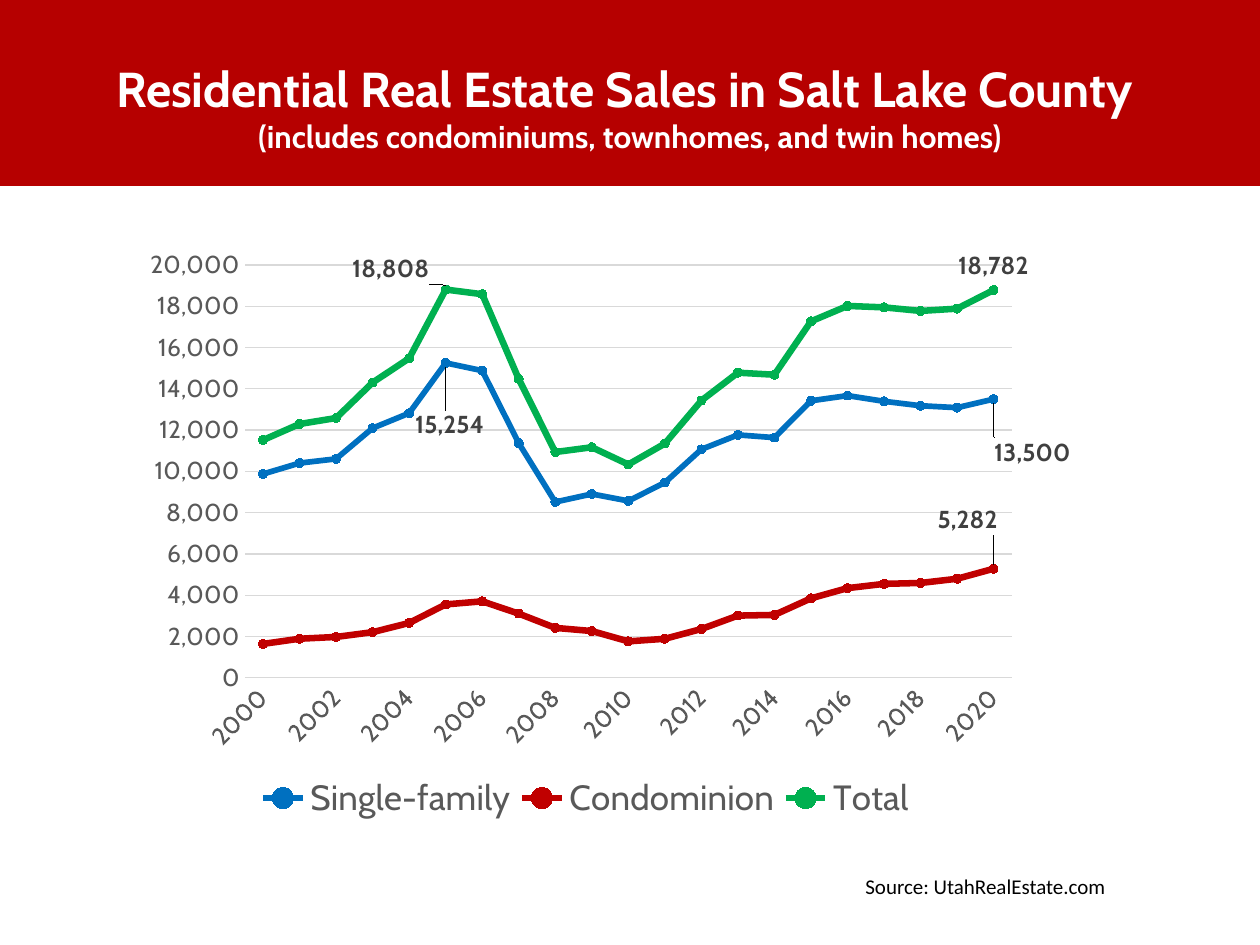
from lxml.etree import SubElement
from pptx import Presentation
from pptx.chart.data import CategoryChartData
from pptx.dml.color import RGBColor
from pptx.enum.chart import (XL_CHART_TYPE, XL_LABEL_POSITION, XL_LEGEND_POSITION,
                             XL_MARKER_STYLE, XL_TICK_MARK)
from pptx.enum.shapes import MSO_SHAPE
from pptx.enum.text import PP_ALIGN
from pptx.oxml import parse_xml
from pptx.oxml.ns import qn
from pptx.util import Pt

PX = 914400 / 126  # EMU in one px
CHART_BOX = (136, 238, 935, 592)

THEME = {
    "banner": "B60000", "white": "FFFFFF", "black": "000000",
    "grid": "D9D9D9", "axis_text": "595959", "label_text": "404040",
    "font": "Cabin", "source_font": "Calibri",
    "title": 28, "subtitle": 18, "source": 12, "axis": 14, "label": 14, "legend": 20,
}

YEARS = [str(year) for year in range(2000, 2021)]
ABOVE, BELOW = XL_LABEL_POSITION.ABOVE, XL_LABEL_POSITION.BELOW

# Labels: point index -> (position, shift right in px, shift down in px)
SERIES = [
    {"name": "Single-family", "color": "0070C0", "width": 3.25,
     "values": [9875, 10403, 10606, 12093, 12819, 15254, 14878, 11368, 8517, 8905, 8570,
                9458, 11067, 11768, 11636, 13421, 13669, 13395, 13179, 13087, 13500],
     "labels": {5: (BELOW, 4, 38), 20: (BELOW, 39, 29)}},
    {"name": "Condominion", "color": "C00000", "width": 3.75,
     "values": [1642, 1892, 1979, 2209, 2657, 3554, 3704, 3108, 2419, 2264, 1765,
                1889, 2363, 3012, 3045, 3847, 4344, 4549, 4592, 4796, 5282],
     "labels": {20: (ABOVE, -26, -24)}},
    {"name": "Total", "color": "00B050", "width": 3.75,
     "values": [11517, 12295, 12585, 14302, 15476, 18808, 18582, 14476, 10936, 11169, 10335,
                11347, 13430, 14780, 14681, 17268, 18013, 17944, 17771, 17883, 18782],
     "labels": {5: (ABOVE, -55, 4), 20: (ABOVE, 0, 0)}},
]

C_NS = "http://schemas.openxmlformats.org/drawingml/2006/chart"
C15_NS = "http://schemas.microsoft.com/office/drawing/2012/chart"
LEADER_LINES = (
    f'<c:extLst xmlns:c="{C_NS}"><c:ext uri="{{CE6537A1-D6FC-4f65-9D91-7224C49458BB}}" '
    f'xmlns:c15="{C15_NS}"><c15:showLeaderLines val="1"/></c:ext></c:extLst>')


def emu(box):
    return [round(n * PX) for n in box]


def rgb(key):
    return RGBColor.from_string(THEME.get(key, key))


def set_font(font, size, color, name="font", bold=False):
    values = {"size": Pt(THEME[size]), "name": THEME[name], "bold": bold}
    for attr, value in values.items():
        setattr(font, attr, value)
    font.color.rgb = rgb(color)


def set_line(line, color, width):
    line.color.rgb = rgb(color)
    line.width = Pt(width)


def add_banner(slide, box):
    sp = slide.shapes.add_shape(MSO_SHAPE.RECTANGLE, *emu(box))
    sp.shadow.inherit = False
    sp.fill.solid()
    sp.fill.fore_color.rgb = rgb("banner")
    sp.line.fill.background()


def add_text(slide, box, lines, align, wrap=True):
    """Each line is its text and a dict of font values."""
    tf = slide.shapes.add_textbox(*emu(box)).text_frame
    tf.word_wrap = wrap
    for i, (text, style) in enumerate(lines):
        p = tf.add_paragraph() if i else tf.paragraphs[0]
        p.alignment = align
        r = p.add_run()
        r.text = text
        set_font(r.font, **style)


def manual_layout(x, y, w=None, h=None, inner=False, edge=True):
    """Layout element in fractions of the chart; edge=False means an offset."""
    target = '<c:layoutTarget val="inner"/>' if inner else ""
    modes = '<c:xMode val="edge"/><c:yMode val="edge"/>' if edge else ""
    _, _, width, height = CHART_BOX
    parts = {"x": x / width, "y": y / height}
    if w:
        parts.update(w=w / width, h=h / height)
    sizes = "".join(f'<c:{k} val="{v:.4f}"/>' for k, v in parts.items())
    return parse_xml(f'<c:layout xmlns:c="{C_NS}"><c:manualLayout>{target}{modes}{sizes}'
                     '</c:manualLayout></c:layout>')


def replace_layout(parent, layout, index):
    for old in parent.findall(qn("c:layout")):
        parent.remove(old)
    parent.insert(index, layout)


def style_axes(chart):
    cat, val = chart.category_axis, chart.value_axis
    for axis in (cat, val):
        axis.major_tick_mark = axis.minor_tick_mark = XL_TICK_MARK.NONE
        set_font(axis.tick_labels.font, "axis", "axis_text")
    # Slanted years, every second one shown
    set_line(cat.format.line, "grid", 0.75)
    cat._element.find(qn("c:txPr")).find(qn("a:bodyPr")).set("rot", "-2700000")
    skip = SubElement(cat._element, qn("c:tickLblSkip"))
    skip.set("val", "2")
    cat._element.find(qn("c:noMultiLvlLbl")).addprevious(skip)
    # Value scale with gridlines only
    scale = {"minimum_scale": 0, "maximum_scale": 20000, "major_unit": 2000}
    for attr, value in scale.items():
        setattr(val, attr, value)
    val.tick_labels.number_format = "#,##0"
    val.tick_labels.number_format_is_linked = False
    val.format.line.fill.background()
    set_line(val.major_gridlines.format.line, "grid", 0.75)


def style_series(ser, data):
    ser.smooth = False
    set_line(ser.format.line, data["color"], data["width"])
    ser.marker.style = XL_MARKER_STYLE.CIRCLE
    ser.marker.size = 5
    ser.marker.format.fill.solid()
    ser.marker.format.fill.fore_color.rgb = rgb(data["color"])
    set_line(ser.marker.format.line, data["color"], 0.75)
    # Callout values, moved off their points
    for index, (position, _, _) in data["labels"].items():
        label = ser.points[index].data_label
        set_font(label.font, "label", "label_text", bold=True)
        label.position = position
    ser.data_labels.show_value = False
    d_lbls = ser._element.find(qn("c:dLbls"))
    for d_lbl, (_, dx, dy) in zip(d_lbls.findall(qn("c:dLbl")), data["labels"].values()):
        if dx or dy:
            replace_layout(d_lbl, manual_layout(dx, dy, edge=False), 1)
    d_lbls.append(parse_xml(LEADER_LINES))


def add_sales_chart(slide):
    chart_data = CategoryChartData(number_format="#,##0")
    chart_data.categories = YEARS
    for data in SERIES:
        chart_data.add_series(data["name"], data["values"])
    chart = slide.shapes.add_chart(XL_CHART_TYPE.LINE_MARKERS, *emu(CHART_BOX), chart_data).chart
    chart.has_title = False
    chart.plots[0].vary_by_categories = False
    style_axes(chart)
    for ser, data in zip(chart.plots[0].series, SERIES):
        style_series(ser, data)
    # Legend below the plot
    chart.has_legend = True
    legend = chart.legend
    legend.position = XL_LEGEND_POSITION.BOTTOM
    legend.include_in_layout = False
    set_font(legend.font, "legend", "axis_text")
    replace_layout(legend._element, manual_layout(116, 536, 670, 54), 1)
    plot_area = chart._chartSpace.chart.plotArea
    replace_layout(plot_area, manual_layout(109, 27, 769, 413, inner=True), 0)


def main():
    prs = Presentation()
    prs.slide_width, prs.slide_height = emu((1260, 945))
    slide = prs.slides.add_slide(prs.slide_layouts[6])

    # Heading
    add_banner(slide, (0, 0, 1260, 186))
    add_text(slide, (63, 52, 1134, 157), [
        ("Residential Real Estate Sales in Salt Lake County ",
         {"size": "title", "color": "white", "bold": True}),
        ("(includes condominiums, townhomes, and twin homes)",
         {"size": "subtitle", "color": "white", "bold": True}),
    ], PP_ALIGN.CENTER)

    # Source
    add_text(slide, (853, 867, 268, 38), [
        ("Source: UtahRealEstate.com",
         {"size": "source", "color": "black", "name": "source_font"}),
    ], PP_ALIGN.LEFT, wrap=False)

    # Sales by year
    add_sales_chart(slide)
    prs.save("out.pptx")


if __name__ == "__main__":
    main()
